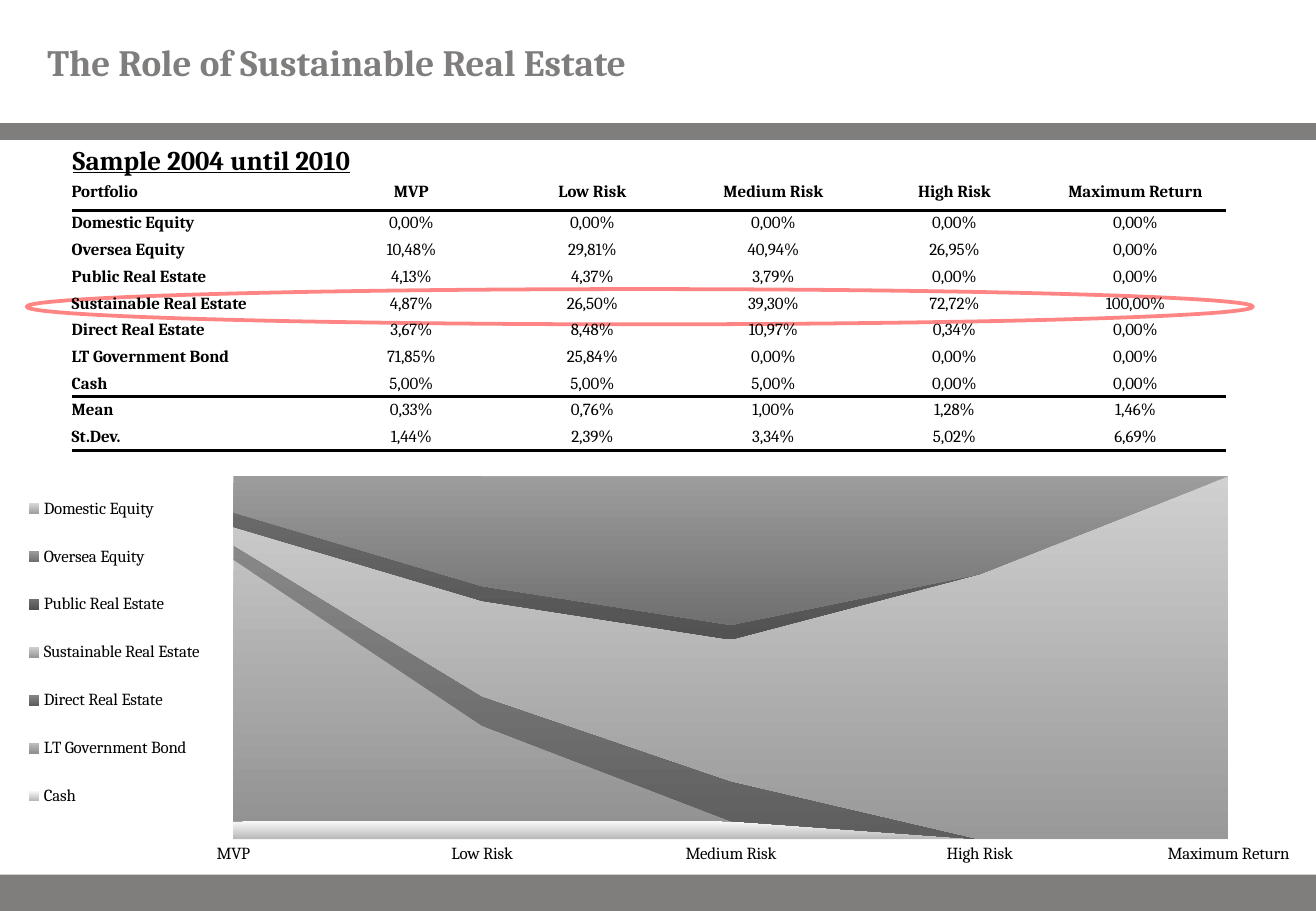
from dataclasses import dataclass

from lxml import etree
from pptx import Presentation
from pptx import util as u
from pptx.chart import data as chart_data
from pptx.dml.color import RGBColor
from pptx.enum import chart as charts, shapes, text
from pptx.oxml import parse_xml
from pptx.oxml.ns import nsdecls, qn


@dataclass(frozen=True)
class Theme:
    font: str = "Cambria"
    gray: RGBColor = RGBColor.from_string("7F7E7D")
    black: RGBColor = RGBColor.from_string("000000")
    red: RGBColor = RGBColor.from_string("FF0000")
    title_size: int = 22
    heading_size: int = 16
    body_size: int = 10


theme = Theme()
Inches = u.Inches
chart_width, chart_height = Inches(10.83), Inches(3.32)
plain_table_style = "{2D5ABB26-0587-4C30-8999-92F81FD0307C}"

portfolios = ["MVP", "Low Risk", "Medium Risk", "High Risk", "Maximum Return"]
# Asset weights in percent, with the top and bottom shade of each area
assets = [
    ("Domestic Equity", [0, 0, 0, 0, 0], "D8D8D8", "A0A0A0"),
    ("Oversea Equity", [10.48, 29.81, 40.94, 26.95, 0], "9C9C9C", "707070"),
    ("Public Real Estate", [4.13, 4.37, 3.79, 0, 0], "727272", "525252"),
    ("Sustainable Real Estate", [4.87, 26.5, 39.3, 72.72, 100], "D0D0D0", "999999"),
    ("Direct Real Estate", [3.67, 8.48, 10.97, 0.34, 0], "888888", "5E5E5E"),
    ("LT Government Bond", [71.85, 25.84, 0, 0, 0], "C0C0C0", "909090"),
    ("Cash", [5, 5, 5, 0, 0], "FAFAFA", "B8B8B8"),
]
statistics = [
    ("Mean", [0.33, 0.76, 1, 1.28, 1.46]),
    ("St.Dev.", [1.44, 2.39, 3.34, 5.02, 6.69]),
]


def add_run(paragraph, words, size, color, bold=False, underline=False):
    run = paragraph.add_run()
    run.text = words
    run.font.name = theme.font
    run.font.size = u.Pt(size)
    run.font.bold = bold
    run.font.underline = underline
    run.font.color.rgb = color


def set_layout(element, left, top, width, height, inner=False):
    """Place a chart part by lengths within the chart area."""
    for old in element.findall(qn("c:layout")):
        element.remove(old)
    target = '<c:layoutTarget val="inner"/>' if inner else ""
    layout = parse_xml(
        f'<c:layout {nsdecls("c")}><c:manualLayout>{target}'
        '<c:xMode val="edge"/><c:yMode val="edge"/>'
        f'<c:x val="{left / chart_width}"/><c:y val="{top / chart_height}"/>'
        f'<c:w val="{width / chart_width}"/><c:h val="{height / chart_height}"/>'
        "</c:manualLayout></c:layout>")
    position = element.find(qn("c:legendPos"))
    element.insert(0 if position is None else 1, layout)


presentation = Presentation()
presentation.slide_width = Inches(10.83)
presentation.slide_height = Inches(7.5)
slide = presentation.slides.add_slide(presentation.slide_layouts[6])

# Header rule and footer band
header_rule = slide.shapes.add_connector(
    shapes.MSO_CONNECTOR.STRAIGHT, 0, Inches(1.08), Inches(10.83), Inches(1.08))
header_rule.line.color.rgb = theme.gray
header_rule.line.width = u.Pt(10)
etree.SubElement(header_rule._element.spPr, qn("a:effectLst"))

footer = slide.shapes.add_shape(
    shapes.MSO_SHAPE.RECTANGLE, 0, Inches(7.2), Inches(10.83), Inches(0.3))
footer.shadow.inherit = False
footer.fill.solid()
footer.fill.fore_color.rgb = theme.gray
footer.line.fill.background()

# Title
title = slide.shapes.add_textbox(0, 0, Inches(10.83), Inches(1.01)).text_frame
title.word_wrap = True
title.vertical_anchor = text.MSO_ANCHOR.MIDDLE
title.margin_left = title.margin_right = Inches(0.39)
title.margin_top = title.margin_bottom = 0
add_run(title.paragraphs[0], "The Role of Sustainable Real Estate",
        theme.title_size, theme.gray, bold=True)

# Ellipse around the sustainable real estate row
highlight = slide.shapes.add_shape(
    shapes.MSO_SHAPE.OVAL, Inches(0.22), Inches(2.38), Inches(10.09), Inches(0.29))
highlight.shadow.inherit = False
highlight.fill.background()
highlight.line.color.rgb = theme.red
highlight.line.width = u.Pt(2.25)
line_color = highlight.line._ln.find(".//" + qn("a:srgbClr"))
etree.SubElement(line_color, qn("a:alpha"), val="47000")

# Table heading
heading = slide.shapes.add_textbox(
    Inches(0.5), Inches(1.13), Inches(7.46), Inches(0.37)).text_frame
heading.word_wrap = True
add_run(heading.paragraphs[0], "Sample 2004 until 2010",
        theme.heading_size, theme.black, bold=True, underline=True)

# Portfolio table
rows = [["Portfolio", *portfolios]]
for name, values, *shades in assets + statistics:
    rows.append([name] + [f"{value:.2f}%".replace(".", ",") for value in values])
table = slide.shapes.add_table(
    len(rows), len(rows[0]), Inches(0.59), Inches(1.43), Inches(9.5), Inches(2.28)).table
table.first_row = table.horz_banding = False
table._tbl.tblPr.find(qn("a:tableStyleId")).text = plain_table_style
for index, column in enumerate(table.columns):
    column.width = Inches(1.49 if index else 2.05)
ruled_rows = {0, len(assets), len(rows) - 1}
for row_index, row in enumerate(rows):
    table.rows[row_index].height = Inches(0.22 if row_index else 0.3)
    for column_index, words in enumerate(row):
        cell = table.cell(row_index, column_index)
        cell.fill.background()
        cell.vertical_anchor = text.MSO_ANCHOR.MIDDLE
        cell.margin_left = cell.margin_right = cell.margin_top = cell.margin_bottom = 0
        paragraph = cell.text_frame.paragraphs[0]
        if column_index:
            paragraph.alignment = text.PP_ALIGN.CENTER
        add_run(paragraph, words, theme.body_size, theme.black,
                bold=row_index == 0 or column_index == 0)
        if row_index in ruled_rows:
            cell._tc.get_or_add_tcPr().insert(0, parse_xml(
                f'<a:lnB {nsdecls("a")} w="{u.Pt(2)}"><a:solidFill>'
                f'<a:srgbClr val="{theme.black}"/></a:solidFill></a:lnB>'))

# Allocation chart in whole percent, stacked from cash upwards
allocation = chart_data.CategoryChartData(number_format="0")
allocation.categories = portfolios
for name, values, *shades in reversed(assets):
    allocation.add_series(name, [round(value) for value in values])
chart = slide.shapes.add_chart(
    charts.XL_CHART_TYPE.AREA_STACKED_100, 0, Inches(3.86),
    chart_width, chart_height, allocation).chart
chart.has_title = False
chart.font.name = theme.font
chart.font.size = u.Pt(theme.body_size)
chart.font.color.rgb = theme.black
chart.plots[0].vary_by_categories = False
for series, (name, values, *shades) in zip(chart.plots[0].series, reversed(assets)):
    fill = series.format.fill
    fill.gradient()
    fill.gradient_angle = 270
    for stop, shade in zip(fill.gradient_stops, shades):
        stop.color.rgb = RGBColor.from_string(shade)
    series.format.line.fill.background()

# Axes, legend and plot area
chart.category_axis.major_tick_mark = charts.XL_TICK_MARK.NONE
chart.category_axis.format.line.fill.background()
value_axis = chart.value_axis
value_axis.major_tick_mark = charts.XL_TICK_MARK.NONE
value_axis.tick_label_position = charts.XL_TICK_LABEL_POSITION.NONE
value_axis.tick_labels.number_format = "0%"
value_axis.tick_labels.number_format_is_linked = False
value_axis.format.line.fill.background()
value_axis.has_major_gridlines = False
value_axis._element.find(qn("c:crossBetween")).set("val", "midCat")
chart.has_legend = True
chart.legend.position = charts.XL_LEGEND_POSITION.LEFT
chart.legend.include_in_layout = False
set_layout(chart.legend._element, Inches(0.13), Inches(0.01), Inches(1.62), Inches(3))
set_layout(chart._chartSpace.chart.plotArea, Inches(1.92), Inches(0.06),
           Inches(8.19), Inches(2.99), inner=True)

presentation.save("out.pptx")
